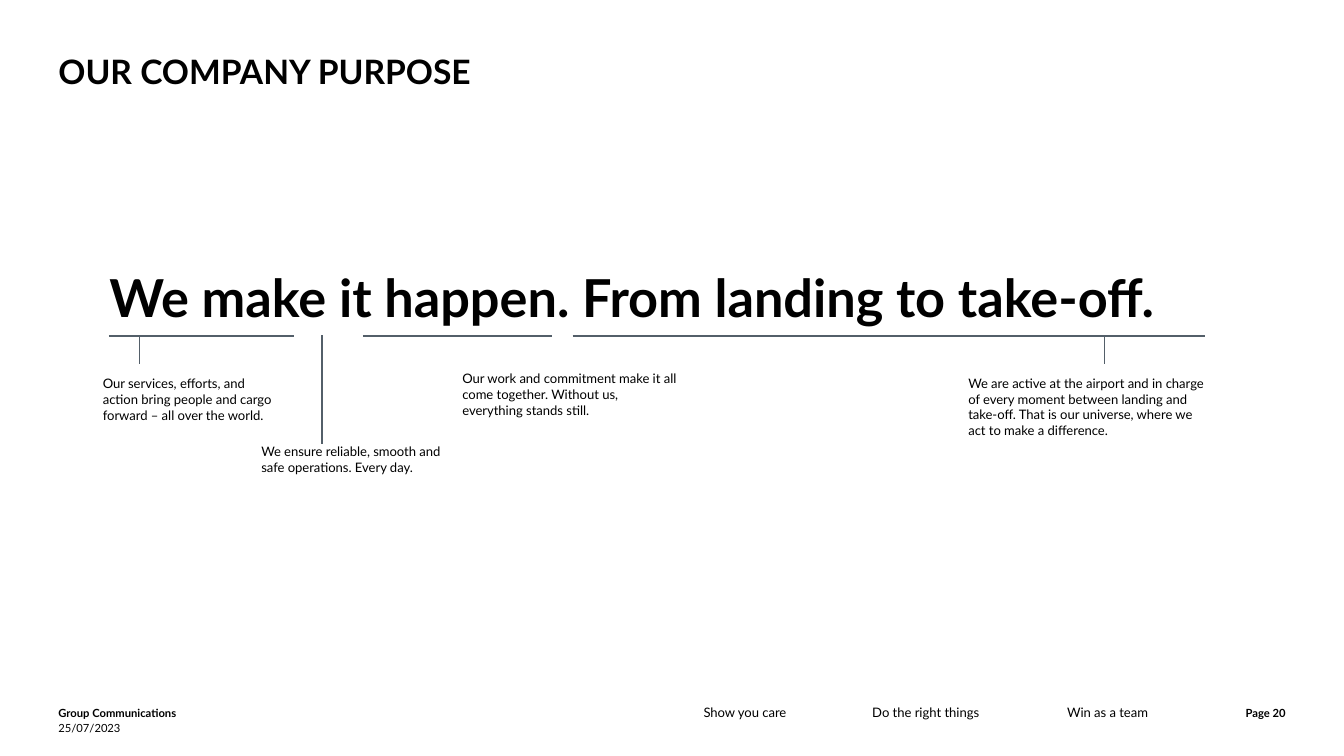
import dataclasses

import pptx
import pptx.dml.color
import pptx.enum.shapes
import pptx.enum.text
import pptx.oxml.ns
import pptx.util
import lxml.etree

PX = 4572
ALIGN = pptx.enum.text.PP_ALIGN
ANCHOR = pptx.enum.text.MSO_ANCHOR


@dataclasses.dataclass(frozen=True)
class Theme:
    font: str = "Lato"
    ink: str = "000000"
    rule: str = "535F69"
    rule_width: float = 0.75
    title: int = 18
    headline: int = 28
    body: int = 7
    footer: int = 6


THEME = Theme()


def add_text(page, frame, lines, size, bold=False, align=ALIGN.LEFT, anchor=ANCHOR.TOP):
    box = page.shapes.add_textbox(*(length * PX for length in frame))
    text = box.text_frame
    text.word_wrap = True
    text.vertical_anchor = anchor
    text.margin_left = text.margin_right = text.margin_top = text.margin_bottom = 0
    text.text = "\n".join(lines)
    for para in text.paragraphs:
        para.alignment = align
        para.font.name = THEME.font
        para.font.size = pptx.util.Pt(size)
        para.font.bold = bold
        para.font.color.rgb = pptx.dml.color.RGBColor.from_string(THEME.ink)


def add_rule(page, left, top, width, height):
    rule = page.shapes.add_connector(
        pptx.enum.shapes.MSO_CONNECTOR.STRAIGHT,
        left * PX, top * PX, (left + width) * PX, (top + height) * PX)
    rule.line.color.rgb = pptx.dml.color.RGBColor.from_string(THEME.rule)
    rule.line.width = pptx.util.Pt(THEME.rule_width)
    properties = rule.element.find(pptx.oxml.ns.qn("p:spPr"))
    lxml.etree.SubElement(properties, pptx.oxml.ns.qn("a:effectLst"))


def add_title(page, left, top, width, height):
    add_text(page, (left, top, width, height), ["OUR COMPANY PURPOSE"], THEME.title, bold=True)


def add_purpose(page, left, top, width, height):
    add_text(page, (left + 1, top, width, height),
             ["We make it happen. From landing to take-off."], THEME.headline, bold=True)
    baseline = top + 106
    for offset, length in ((0, 276), (378, 282), (690, 941)):
        add_rule(page, left + offset, baseline, length, 0)
    for offset, rise, length in ((46, 0, 42), (317, 1, 162), (1482, 0, 42)):
        add_rule(page, left + offset, baseline - rise, 0, length)
    notes = (
        (-9, 59, 316, 70, ["Our services, efforts, and",
                           "action bring people and cargo",
                           "forward – all over the world."]),
        (227, 160, 274, 70, ["We ensure reliable, smooth and safe operations. Every day."]),
        (526, 52, 370, 70, ["Our work and commitment make it all",
                            "come together. Without us,",
                            "everything stands still."]),
        (1279, 59, 406, 94, ["We are active at the airport and in charge",
                             "of every moment between landing and",
                             "take-off. That is our universe, where we",
                             "act to make a difference."]),
    )
    for offset, drop, note_width, note_height, lines in notes:
        add_text(page, (left + offset, baseline + drop, note_width, note_height),
                 lines, THEME.body)


def add_footer(page, left, top, width, height):
    values = ((960, 140, "Show you care"), (1211, 180, "Do the right things"),
              (1501, 140, "Win as a team"))
    for offset, value_width, value in values:
        add_text(page, (left + offset, top, value_width, 24), [value], THEME.body)
    add_text(page, (left, top + 3, 1580, 20), ["Group Communications"],
             THEME.footer, bold=True, anchor=ANCHOR.MIDDLE)
    add_text(page, (left, top + height - 20, 466, 20), ["25/07/2023"],
             THEME.footer, anchor=ANCHOR.MIDDLE)
    add_text(page, (left + width - 164, top + 3, 164, 20), ["Page 20"],
             THEME.footer, bold=True, align=ALIGN.RIGHT, anchor=ANCHOR.MIDDLE)


def main():
    deck = pptx.Presentation()
    deck.slide_width = 2000 * PX
    deck.slide_height = 1125 * PX
    page = deck.slides.add_slide(deck.slide_layouts[6])
    add_title(page, 87, 76, 1606, 122)
    add_purpose(page, 162, 394, 1660, 282)
    add_footer(page, 87, 1048, 1826, 46)
    deck.save("out.pptx")


if __name__ == "__main__":
    main()
